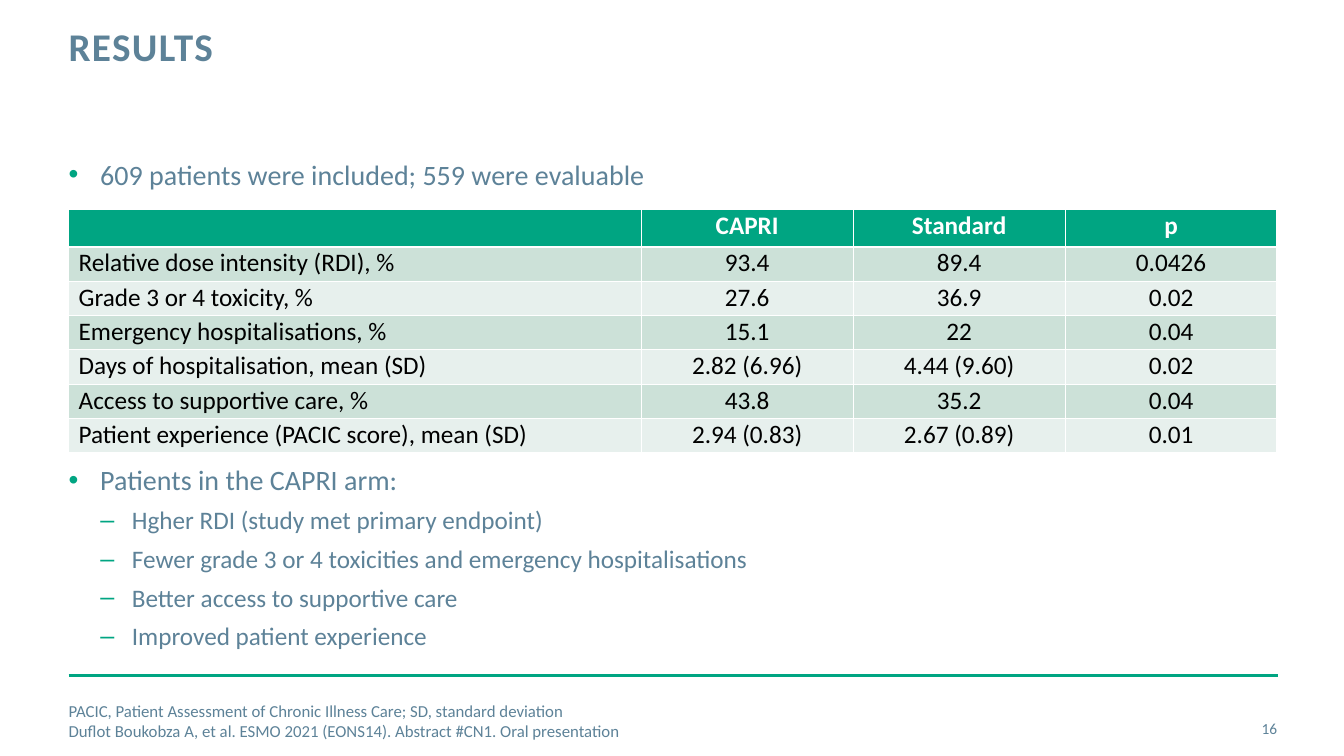
from dataclasses import dataclass

from lxml.etree import SubElement
from pptx import Presentation
from pptx.dml.color import RGBColor
from pptx.enum.shapes import MSO_CONNECTOR
from pptx.enum.text import MSO_ANCHOR, MSO_AUTO_SIZE, PP_ALIGN
from pptx.oxml.ns import qn
from pptx.slide import Slide
from pptx.text.text import TextFrame, _Paragraph
from pptx.util import Pt

FONT = "Calibri"
SLATE, GREEN, WHITE, BLACK = "5D8298", "00A582", "FFFFFF", "000000"
BAND_FILLS = ("CCE1D8", "E7F0ED")
LEFT, WIDTH = 49, 863.3
INDENT = 22.6

COLUMN_WIDTHS = (409, 151.4, 151.4, 151.4)
HEADER_HEIGHT, ROW_HEIGHT = 26.6, 24.5
RESULTS = (
    ("", "CAPRI", "Standard", "p"),
    ("Relative dose intensity (RDI), %", "93.4", "89.4", "0.0426"),
    ("Grade 3 or 4 toxicity, %", "27.6", "36.9", "0.02"),
    ("Emergency hospitalisations, %", "15.1", "22", "0.04"),
    ("Days of hospitalisation, mean (SD)", "2.82 (6.96)", "4.44 (9.60)", "0.02"),
    ("Access to supportive care, %", "43.8", "35.2", "0.04"),
    ("Patient experience (PACIC score), mean (SD)", "2.94 (0.83)", "2.67 (0.89)", "0.01"),
)


@dataclass(frozen=True)
class Line:
    text: str
    size: float
    bullet: str = ""
    level: int = 0
    space_before: float = 0
    align: PP_ALIGN = PP_ALIGN.LEFT


@dataclass(frozen=True)
class TextBlock:
    left: float
    top: float
    width: float
    height: float
    lines: tuple[Line, ...]
    anchor: MSO_ANCHOR = MSO_ANCHOR.TOP


def sub_point(text: str) -> Line:
    return Line(text, 18, "–", level=1, space_before=6)


BLOCKS = (
    TextBlock(LEFT, 112.3, WIDTH, 34,
              (Line("609 patients were included; 559 were evaluable", 20, "•"),)),
    TextBlock(LEFT, 330.5, WIDTH, 140.4, (
        Line("Patients in the CAPRI arm:", 20, "•"),
        sub_point("Hgher RDI (study met primary endpoint)"),
        sub_point("Fewer grade 3 or 4 toxicities and emergency hospitalisations"),
        sub_point("Better access to supportive care"),
        sub_point("Improved patient experience"),
    )),
    TextBlock(LEFT, 500.4, 639.4, 28.8, (
        Line("PACIC, Patient Assessment of Chronic Illness Care; SD, standard deviation", 12),
        Line("Duflot Boukobza A, et al. ESMO 2021 (EONS14). Abstract #CN1. Oral presentation", 12),
    ), MSO_ANCHOR.MIDDLE),
    TextBlock(850.3, 506.2, 62, 28.8,
              (Line("16", 11, align=PP_ALIGN.RIGHT),), MSO_ANCHOR.MIDDLE),
)


def rgb(hex_color: str) -> RGBColor:
    return RGBColor.from_string(hex_color)


def add_run(paragraph: _Paragraph, text: str, size: float, color: str, bold: bool = False):
    run = paragraph.add_run()
    run.text = text
    run.font.name = FONT
    run.font.size = Pt(size)
    run.font.bold = bold
    run.font.color.rgb = rgb(color)
    return run


def add_bullet(paragraph: _Paragraph, symbol: str, level: int) -> None:
    paragraph.level = level
    properties = paragraph._p.get_or_add_pPr()
    properties.set("marL", str(Pt(INDENT * (level + 1))))
    properties.set("indent", str(Pt(-INDENT)))
    bullet_color = SubElement(properties, qn("a:buClr"))
    SubElement(bullet_color, qn("a:srgbClr"), val=GREEN)
    SubElement(properties, qn("a:buFont"), typeface="Arial")
    SubElement(properties, qn("a:buChar"), char=symbol)


def prepare_frame(frame: TextFrame, anchor: MSO_ANCHOR) -> None:
    """Wrap the text and remove the margins."""
    frame.word_wrap = True
    frame.auto_size = MSO_AUTO_SIZE.NONE
    frame.vertical_anchor = anchor
    frame.margin_left = frame.margin_right = frame.margin_top = frame.margin_bottom = 0


def add_title(slide: Slide) -> None:
    title = slide.shapes.title
    title.left, title.top, title.width, title.height = Pt(LEFT), Pt(19.4), Pt(688.3), Pt(63.4)
    prepare_frame(title.text_frame, MSO_ANCHOR.TOP)
    paragraph = title.text_frame.paragraphs[0]
    paragraph.alignment = PP_ALIGN.LEFT
    paragraph.line_spacing = Pt(30)
    run = add_run(paragraph, "RESULTS", 28, SLATE, bold=True)
    run.font._element.set("spc", "100")


def add_block(slide: Slide, block: TextBlock) -> None:
    box = slide.shapes.add_textbox(Pt(block.left), Pt(block.top), Pt(block.width), Pt(block.height))
    frame = box.text_frame
    prepare_frame(frame, block.anchor)
    for index, line in enumerate(block.lines):
        paragraph = frame.add_paragraph() if index else frame.paragraphs[0]
        paragraph.alignment = line.align
        if line.space_before:
            paragraph.space_before = Pt(line.space_before)
        if line.bullet:
            add_bullet(paragraph, line.bullet, line.level)
        add_run(paragraph, line.text, line.size, SLATE)


def add_results_table(slide: Slide) -> None:
    height = HEADER_HEIGHT + ROW_HEIGHT * (len(RESULTS) - 1)
    table = slide.shapes.add_table(len(RESULTS), len(COLUMN_WIDTHS), Pt(LEFT), Pt(149.8),
                                   Pt(sum(COLUMN_WIDTHS)), Pt(height)).table
    for column, width in zip(table.columns, COLUMN_WIDTHS):
        column.width = Pt(width)
    for row_index, values in enumerate(RESULTS):
        is_header = row_index == 0
        table.rows[row_index].height = Pt(HEADER_HEIGHT if is_header else ROW_HEIGHT)
        for column_index, value in enumerate(values):
            cell = table.cell(row_index, column_index)
            cell.fill.solid()
            cell.fill.fore_color.rgb = rgb(GREEN if is_header else BAND_FILLS[(row_index - 1) % 2])
            cell.margin_top = cell.margin_bottom = Pt(2)
            paragraph = cell.text_frame.paragraphs[0]
            paragraph.alignment = PP_ALIGN.CENTER if column_index else PP_ALIGN.LEFT
            paragraph.line_spacing = 0.9
            if value:
                add_run(paragraph, value, 18, WHITE if is_header else BLACK, bold=is_header)


def add_footer_rule(slide: Slide) -> None:
    rule = slide.shapes.add_connector(MSO_CONNECTOR.STRAIGHT, Pt(LEFT), Pt(482.4),
                                      Pt(913), Pt(482.4))
    rule.line.color.rgb = rgb(GREEN)
    rule.line.width = Pt(2)
    SubElement(rule._element.spPr, qn("a:effectLst"))


def main() -> None:
    presentation = Presentation()
    presentation.slide_width, presentation.slide_height = Pt(960), Pt(540)
    slide = presentation.slides.add_slide(presentation.slide_layouts.get_by_name("Title Only"))
    add_footer_rule(slide)
    add_title(slide)
    add_results_table(slide)
    for block in BLOCKS:
        add_block(slide, block)
    presentation.save("out.pptx")


if __name__ == "__main__":
    main()
